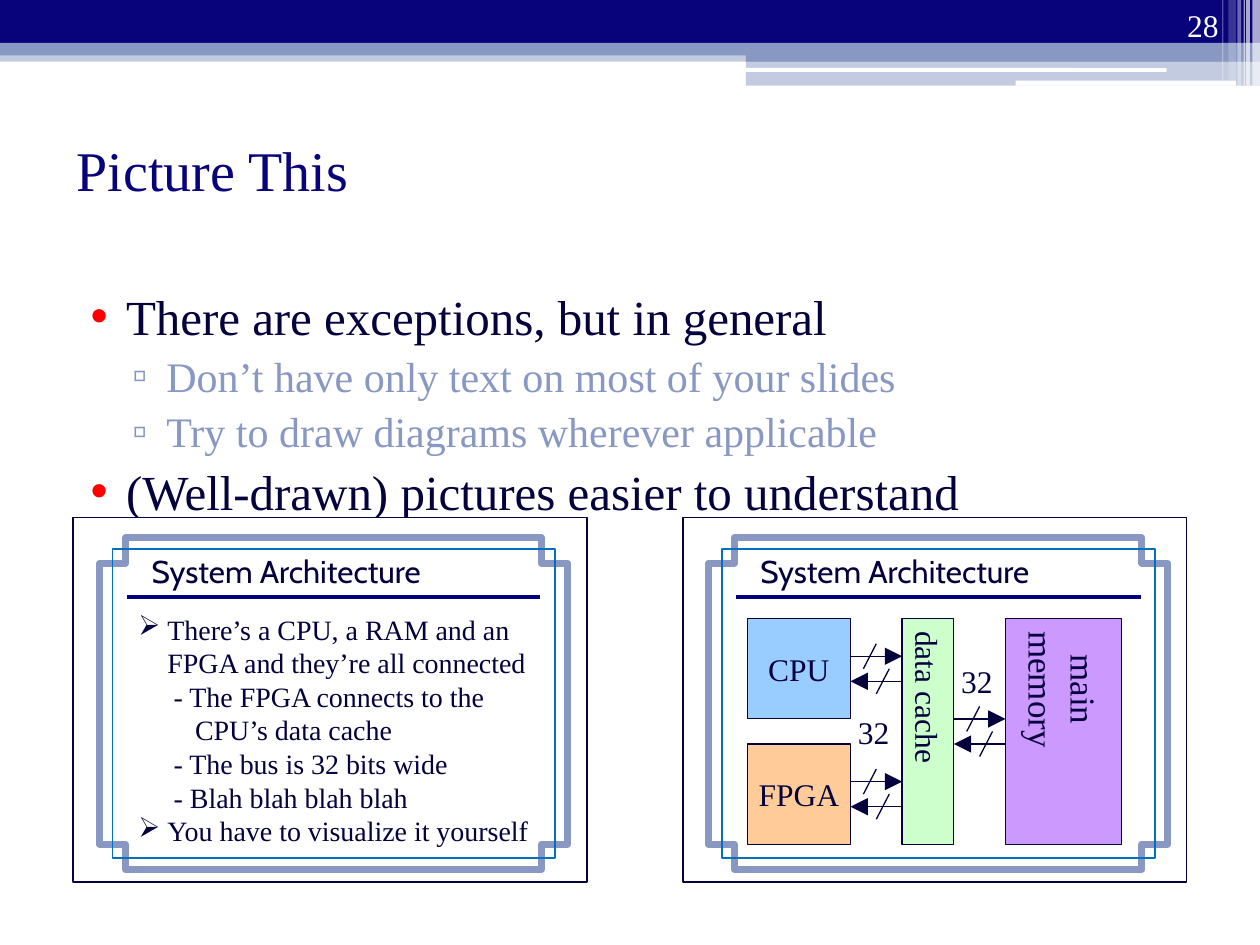
from dataclasses import dataclass

from lxml import etree
from pptx import Presentation
from pptx import util as u
from pptx.dml.color import RGBColor
from pptx.enum import shapes, text
from pptx.oxml import ns


@dataclass(frozen=True)
class Theme:
    navy: str = "09037B"
    ink: str = "04013D"
    slate: str = "8898C3"
    white: str = "FFFFFF"
    red: str = "FF0000"
    blue: str = "0070C0"
    rule: str = "000080"
    serif: str = "Times New Roman"
    sans: str = "Cabin"
    title: int = 32
    main: int = 28
    sub: int = 24
    large: int = 20
    label: int = 18
    small: int = 16


THEME = Theme()
RECT, ROUND = shapes.MSO_SHAPE.RECTANGLE, shapes.MSO_SHAPE.ROUNDED_RECTANGLE
LEFT, CENTER, RIGHT = text.PP_ALIGN.LEFT, text.PP_ALIGN.CENTER, text.PP_ALIGN.RIGHT
TOP, MIDDLE, BOTTOM = text.MSO_ANCHOR.TOP, text.MSO_ANCHOR.MIDDLE, text.MSO_ANCHOR.BOTTOM

# Content
TITLE, NUMBER = "Picture This", "28"
MAIN = dict(size=THEME.main, bullet="•", bullet_color=THEME.red, indent=(0.4, -0.28), before=3)
SUB = dict(size=THEME.sub, color=THEME.slate, bullet="▫", bullet_color=THEME.slate,
           indent=(0.72, -0.27), before=3, level=1)
BODY = [
    ("There are exceptions, but in general", {**MAIN, "before": 0}),
    ("Don’t have only text on most of your slides", SUB),
    ("Try to draw diagrams wherever applicable", SUB),
    ("(Well-drawn) pictures easier to understand", MAIN),
]
PANEL_TITLE = "System Architecture"
POINT = dict(size=THEME.small, bullet="➢", indent=(0.23, -0.23))
DASH = dict(size=THEME.small, indent=(0.28, 0))
WORDS = [
    ("There’s a CPU, a RAM and an FPGA and they’re all connected", POINT),
    ("- The FPGA connects to the", DASH),
    ("CPU’s data cache", {**DASH, "indent": (0.45, 0)}),
    ("- The bus is 32 bits wide", DASH),
    ("- Blah blah blah blah", DASH),
    ("You have to visualize it yourself", POINT),
]
# Blocks: lines, fill, text size, vertical, then column, row, columns, rows
BLOCKS = [
    (["CPU"], "99CCFF", THEME.label, False, (0, 0, 2, 8)),
    (["FPGA"], "FFCC99", THEME.label, False, (0, 10, 2, 8)),
    (["data cache"], "CCFFCC", THEME.label, True, (3, 0, 1, 18)),
    (["main", "memory"], "CC99FF", THEME.large, True, (5, 0, 2.25, 18)),
]
BUSES = [(2, 3), (2, 13), (4, 8)]  # column and row of each pair of arrows
WIDTHS = [("32", 2, 7), ("32", 4, 3)]
# Banner: shape, left, top, width, height, colour, opacity in percent
BANDS = [
    (RECT, 0, 0.4, 10, 0.09, THEME.slate, 50),
    (RECT, 0, 0, 10, 0.34, THEME.navy, 100),
    (RECT, 0, 0.34, 10, 0.1, THEME.slate, 100),
    (RECT, 5.92, 0.39, 4.08, 0.1, THEME.slate, 100),
    (RECT, 5.92, 0.48, 4.08, 0.2, THEME.slate, 50),
    (ROUND, 5.91, 0.54, 3.35, 0.03, THEME.white, 100),
    (ROUND, 8.06, 0.64, 1.75, 0.04, THEME.white, 100),
] + [(RECT, left, 0, width, height, THEME.white, opacity)
     for left, width, height, opacity in [
         (9.94, 0.06, 0.68, 65), (9.89, 0.03, 0.68, 65), (9.87, 0.01, 0.68, 60),
         (9.82, 0.03, 0.68, 40), (9.75, 0.06, 0.64, 20), (9.7, 0.01, 0.64, 30)]]
PANEL_TOP, PANEL_HEIGHT = 4.11, 2.89


def inches(*values):
    return [u.Inches(value) for value in values]


def paint(shape, fill=None, line=None, weight=0.75, opacity=100):
    shape.shadow.inherit = False
    if fill:
        shape.fill.solid()
        shape.fill.fore_color.rgb = RGBColor.from_string(fill)
        if opacity < 100:
            color = shape.fill._xPr.find(".//" + ns.qn("a:srgbClr"))
            etree.SubElement(color, ns.qn("a:alpha"), val=str(opacity * 1000))
    else:
        shape.fill.background()
    if line:
        shape.line.color.rgb = RGBColor.from_string(line)
        shape.line.width = u.Pt(weight)
    else:
        shape.line.fill.background()
    return shape


def write(frame, lines, wrap=True, anchor=TOP, **shared):
    """Fill a text frame from (text, format) pairs; shared formats apply to all."""
    frame.word_wrap, frame.vertical_anchor = wrap, anchor
    frame.auto_size = text.MSO_AUTO_SIZE.NONE
    for index, (words, own) in enumerate(lines):
        style = {**shared, **own}
        paragraph = frame.add_paragraph() if index else frame.paragraphs[0]
        paragraph.level = style.get("level", 0)
        paragraph.alignment = style.get("align", LEFT)
        paragraph.space_before = u.Pt(style.get("before", 0))
        properties = paragraph._p.get_or_add_pPr()
        if "indent" in style:
            margin, first = inches(*style["indent"])
            properties.set("marL", str(margin))
            properties.set("indent", str(first))
        if "bullet" in style:
            if "bullet_color" in style:
                color = etree.SubElement(properties, ns.qn("a:buClr"))
                etree.SubElement(color, ns.qn("a:srgbClr"), val=style["bullet_color"])
            etree.SubElement(properties, ns.qn("a:buChar"), char=style["bullet"])
        run = paragraph.add_run()
        run.text = words
        run.font.name = style.get("font", THEME.serif)
        run.font.size = u.Pt(style["size"])
        run.font.color.rgb = RGBColor.from_string(style.get("color", THEME.ink))


def add_text(parent, box, lines, **style):
    write(parent.add_textbox(*inches(*box)).text_frame, lines, **style)


def add_line(parent, start, end, color=THEME.ink, weight=0.75, arrow=False):
    line = parent.add_connector(shapes.MSO_CONNECTOR.STRAIGHT, *inches(*start, *end))
    line.line.color.rgb = RGBColor.from_string(color)
    line.line.width = u.Pt(weight)
    if arrow:
        etree.SubElement(line.line._get_or_add_ln(), ns.qn("a:tailEnd"),
                         type="triangle", w="lg", len="lg")
    etree.SubElement(line._element.spPr, ns.qn("a:effectLst"))


def add_outline(parent, points, color, weight):
    corners = [inches(*point) for point in points]
    builder = parent.build_freeform(*corners[0], scale=1.0)
    builder.add_line_segments(corners[1:], close=True)
    paint(builder.convert_to_shape(), line=color, weight=weight)


def add_panel(slide, left, width):
    """Draw a framed miniature slide and return its group."""
    group = slide.shapes.add_group_shape().shapes
    paint(group.add_shape(RECT, *inches(left, PANEL_TOP, width, PANEL_HEIGHT)),
          THEME.white, THEME.ink)
    x1, xi1, x2, xr1, xr2, x3, xi2, x4 = [
        left + share * width for share in (0.051, 0.077, 0.102, 0.105, 0.909, 0.911, 0.937, 0.962)]
    y1, yi1, y2, y3, yi2, y4 = 4.27, 4.36, 4.47, 6.7, 6.81, 6.9
    add_outline(group, [(x1, y2), (x2, y2), (x2, y1), (x3, y1), (x3, y2), (x4, y2),
                        (x4, y3), (x3, y3), (x3, y4), (x2, y4), (x2, y3), (x1, y3)],
                THEME.slate, 4)
    add_outline(group, [(xi1, yi1), (xi2, yi1), (xi2, yi2), (xi1, yi2)], THEME.blue, 1)
    add_line(group, (xr1, 4.74), (xr2, 4.74), THEME.rule, 2)
    add_text(group, (left + 0.129 * width, 4.33, 2.4, 0.37), [(PANEL_TITLE, {})],
             wrap=False, size=THEME.label, font=THEME.sans)
    return group


def add_diagram(group):
    def column(number):
        return 5.93 + 0.41 * number

    def row(number):
        return 4.91 + 0.0995 * number

    for lines, fill, size, vertical, (c, r, columns, rows) in BLOCKS:
        box = inches(column(c), row(r), 0.41 * columns, 0.0995 * rows)
        block = paint(group.add_shape(RECT, *box), fill, THEME.ink)
        write(block.text_frame, [(line, {}) for line in lines], wrap=False,
              anchor=MIDDLE, size=size, align=CENTER)
        if vertical:
            block.text_frame._txBody.bodyPr.set("vert", "eaVert")
    # Each bus is an arrow out and, two rows below, an arrow back, both slashed
    for c, r in BUSES:
        for begin, end, y, slash in [(c, c + 1, r, c + 0.25), (c + 1, c, r + 2, c + 0.5)]:
            add_line(group, (column(begin), row(y)), (column(end), row(y)), arrow=True)
            add_line(group, (column(slash + 0.25), row(y - 1)), (column(slash), row(y + 1)))
    for words, c, r in WIDTHS:
        add_text(group, (column(c) - 0.04, row(r), 0.45, 0.37), [(words, {})],
                 wrap=False, size=THEME.label)


def main():
    presentation = Presentation()
    presentation.slide_width, presentation.slide_height = inches(10, 7.5)
    slide = presentation.slides.add_slide(presentation.slide_layouts[1])

    # Banner and slide number
    for kind, left, top, width, height, color, opacity in BANDS:
        paint(slide.shapes.add_shape(kind, *inches(left, top, width, height)),
              color, opacity=opacity)
    add_text(slide.shapes, (8.94, 0, 0.83, 0.4), [(NUMBER, {})], anchor=BOTTOM,
             size=THEME.label, color=THEME.white, align=RIGHT)

    # Title and list
    title, body = slide.placeholders
    for shape, box in [(title, (0.51, 0.76, 9, 1.17)), (body, (0.5, 2.22, 9, 4.97))]:
        shape.left, shape.top, shape.width, shape.height = inches(*box)
    write(title.text_frame, [(TITLE, {})], anchor=MIDDLE, size=THEME.title, color=THEME.navy)
    write(body.text_frame, BODY)

    # Words on the left, the same idea drawn on the right
    add_text(add_panel(slide, 0.58, 4.08), (1, 4.81, 3.35, 1.8), WORDS)
    add_diagram(add_panel(slide, 5.42, 4))
    presentation.save("out.pptx")


if __name__ == "__main__":
    main()
